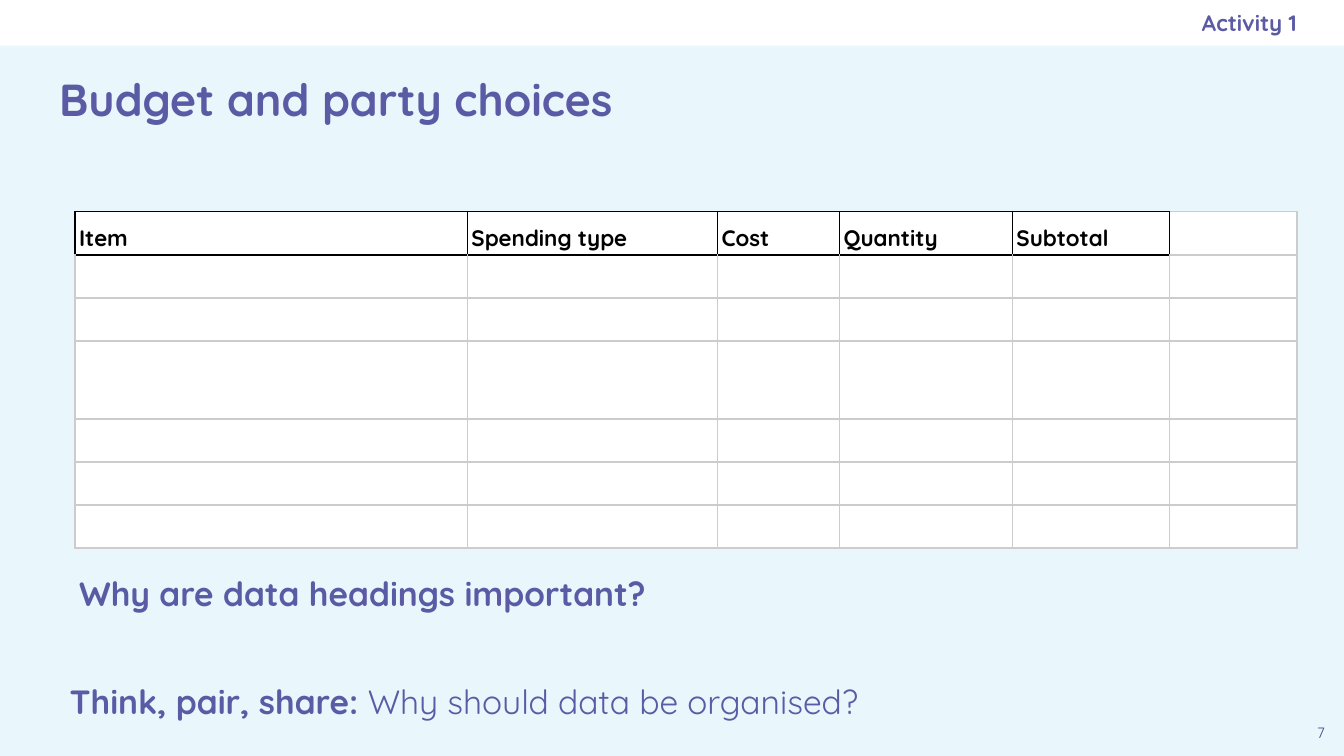
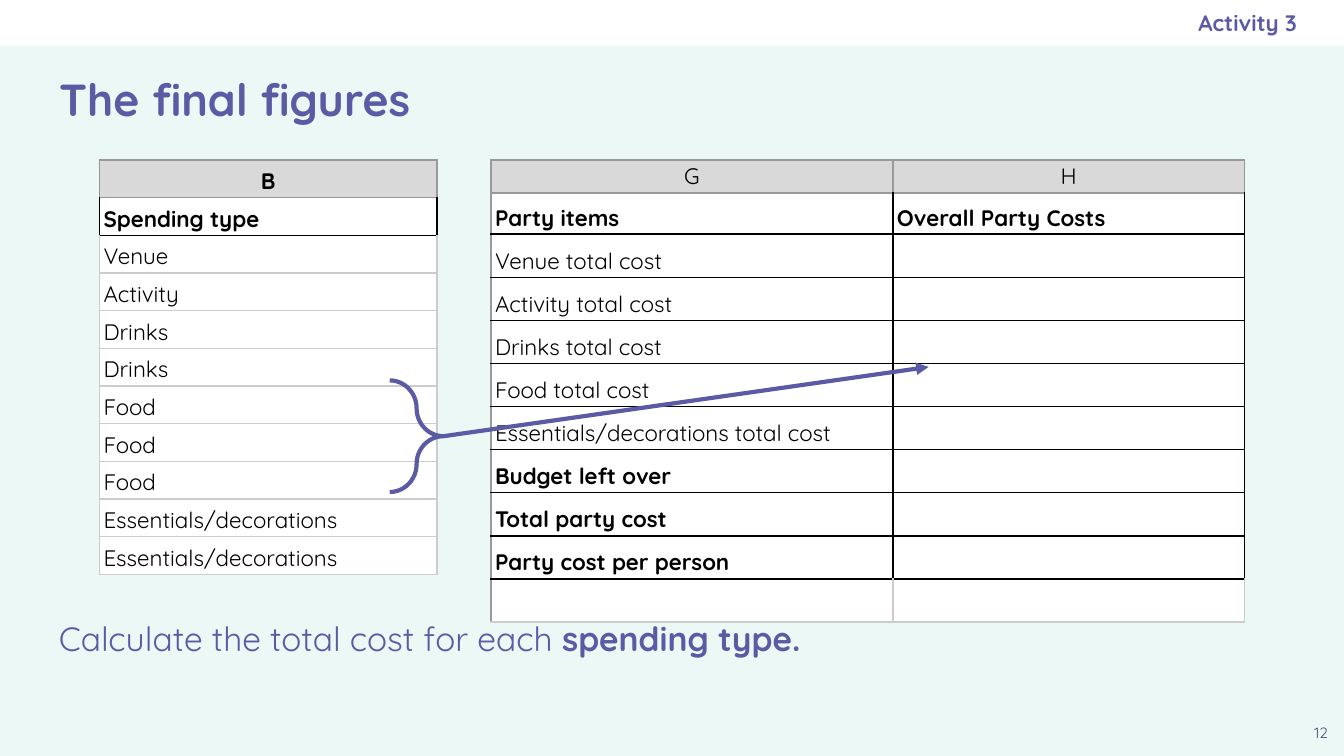
"""Build two lesson slides on planning a party budget in a spreadsheet."""
from lxml import etree
from pptx import Presentation
from pptx.dml.color import RGBColor
from pptx.enum.shapes import MSO_CONNECTOR, MSO_SHAPE
from pptx.enum.text import MSO_ANCHOR, MSO_AUTO_SIZE, PP_ALIGN
from pptx.oxml.ns import qn
from pptx.util import Pt

LEFT, CENTER, RIGHT = PP_ALIGN.LEFT, PP_ALIGN.CENTER, PP_ALIGN.RIGHT
TOP, MIDDLE, BOTTOM = MSO_ANCHOR.TOP, MSO_ANCHOR.MIDDLE, MSO_ANCHOR.BOTTOM
NO_FIT = MSO_AUTO_SIZE.NONE
RECT, BRACE = MSO_SHAPE.RECTANGLE, MSO_SHAPE.RIGHT_BRACE
STRAIGHT = MSO_CONNECTOR.STRAIGHT

FONT = "Quicksand"
PURPLE, DARK_PURPLE = "5B5BA5", "494985"
WHITE, BLACK, HEAD_GREY = "FFFFFF", "000000", "D9D9D9"
MID, PALE = "999999", "CCCCCC"
WIDTH, HEIGHT, BAND = 720, 405, 24.5

# Cell borders: left, right, top, bottom
BOXED = (BLACK,) * 4
GRID = (PALE,) * 4
LETTER = (MID,) * 4
UNDER_LETTER = (BLACK, BLACK, MID, BLACK)
UNDER_HEAD = (PALE, PALE, BLACK, PALE)
BESIDE_HEAD = (BLACK, PALE, PALE, PALE)
LABEL = (MID, BLACK, BLACK, BLACK)
LABEL_TOP = (MID, BLACK, MID, BLACK)
LABEL_END = (MID, PALE, BLACK, PALE)

BUDGET_HEADS = ["Item", "Spending type", "Cost", "Quantity", "Subtotal"]
SPENDING = ["Venue", "Activity", "Drinks", "Drinks", "Food", "Food", "Food",
            "Essentials/decorations", "Essentials/decorations"]
COSTS = ["Venue total cost", "Activity total cost", "Drinks total cost",
         "Food total cost", "Essentials/decorations total cost"]
TOTALS = ["Budget left over", "Total party cost", "Party cost per person"]

# Cells: text, bold, borders
BUDGET = {
    "at": (40.2, 113.4),
    "cols": [210.2, 134, 65.4, 92.6, 84.2, 68.4],
    "rows": [23.1] * 3 + [41.8] + [23.1] * 3,
    "cells": [[(h, True, BOXED) for h in BUDGET_HEADS] + [("", False, BESIDE_HEAD)],
              [("", False, UNDER_HEAD)] * 5 + [("", False, GRID)]]
             + [[("", False, GRID)] * 6] * 5,
}
PARTY_COSTS = {
    "at": (263, 85.7),
    "cols": [215.3, 188.4],
    "rows": [17.8, 22] + [23.1] * 9,
    "cells": [[("G", False, LETTER), ("H", False, LETTER)],
              [("Party items", True, LABEL_TOP),
               ("Overall Party Costs", True, UNDER_LETTER)]]
             + [[(c, False, LABEL), ("", False, BOXED)] for c in COSTS]
             + [[(t, True, LABEL), ("", False, BOXED)] for t in TOTALS]
             + [[("", False, LABEL_END), ("", False, UNDER_HEAD)]],
}
SPENDING_TYPES = {
    "at": (53.3, 85.7),
    "cols": [180.9],
    "rows": [20.2] * 11,
    "cells": [[("B", True, LETTER)], [("Spending type", True, UNDER_LETTER)],
              [(SPENDING[0], False, UNDER_HEAD)]]
             + [[(s, False, GRID)] for s in SPENDING[1:]],
}

SLIDES = [
    {"bg": "E9F7FC", "title": "Budget and party choices", "tag": "Activity 1",
     "number": "7", "tables": [BUDGET],
     "prompts": [((30.2, 354.2, 671, 54.7), 1.15,
                  [("Think, pair, share: ", True),
                   ("Why should data be organised?", False)]),
                 ((35.3, 296.6, 671, 24.5), 1.15,
                  [("Why are data headings important?", True)])]},
    {"bg": "ECF8F5", "title": "The final figures", "tag": "Activity 3",
     "number": "12", "tables": [PARTY_COSTS, SPENDING_TYPES],
     "prompts": [((24.5, 324, 671, 40.3), 1,
                  [("Calculate the total cost for each ", False),
                   ("spending type.", True)])],
     "brace": (208.8, 203.8, 28.8, 59.8), "arrow_to": (497.5, 196.6)},
]


def rgb(color):
    """Turn a hex string into a colour."""
    return RGBColor.from_string(color)


def fill(target, color):
    """Give a shape, cell or background a solid fill."""
    target.fill.solid()
    target.fill.fore_color.rgb = rgb(color)


def stroke(sp):
    """Draw a shape outline or connector in the accent colour."""
    sp.line.color.rgb = rgb(PURPLE)
    sp.line.width = Pt(2.25)


def add_runs(p, runs, size, color, align=LEFT, spacing=1, after=0):
    """Write (text, bold) runs into a paragraph."""
    p.alignment, p.line_spacing = align, spacing
    p.space_before, p.space_after = Pt(0), Pt(after)
    for text, bold in runs:
        r = p.add_run()
        r.text = text
        r.font.name, r.font.size, r.font.bold = FONT, Pt(size), bold
        r.font.color.rgb = rgb(color)


def set_text(sp, runs, size, color=PURPLE, anchor=TOP, right=7.2, **layout):
    """Format the text frame of a shape and fill its first paragraph."""
    tf = sp.text_frame
    tf.word_wrap, tf.auto_size, tf.vertical_anchor = True, NO_FIT, anchor
    tf.margin_left = tf.margin_top = tf.margin_bottom = Pt(7.2)
    tf.margin_right = Pt(right)
    add_runs(tf.paragraphs[0], runs, size, color, **layout)


def add_text(s, box, runs, size, **layout):
    """Add a text box."""
    set_text(s.shapes.add_textbox(*map(Pt, box)), runs, size, **layout)


def set_borders(cell, colors):
    """Draw the four 1 pt borders of a cell."""
    props = cell._tc.get_or_add_tcPr()
    for side, color in zip("LRTB", colors):
        ln = etree.SubElement(props, qn(f"a:ln{side}"), w=str(Pt(1)))
        solid = etree.SubElement(ln, qn("a:solidFill"))
        etree.SubElement(solid, qn("a:srgbClr"), val=color)


def add_table(s, spec_table):
    """Add a table with its own borders and fills."""
    cols, rows = spec_table["cols"], spec_table["rows"]
    left, top = spec_table["at"]
    table = s.shapes.add_table(len(rows), len(cols), Pt(left), Pt(top),
                               Pt(sum(cols)), Pt(sum(rows))).table
    table.first_row = table.horz_banding = False
    for col, width in zip(table.columns, cols):
        col.width = Pt(width)
    for i, (height, cells) in enumerate(zip(rows, spec_table["cells"])):
        table.rows[i].height = Pt(height)
        for j, (text, bold, borders) in enumerate(cells):
            cell = table.cell(i, j)
            letter = borders == LETTER
            set_borders(cell, borders)
            fill(cell, HEAD_GREY if letter else WHITE)
            cell.margin_left = cell.margin_right = Pt(2.2)
            cell.margin_top = cell.margin_bottom = Pt(1.4)
            cell.vertical_anchor = MIDDLE if letter else BOTTOM
            p = cell.text_frame.paragraphs[0]
            if text:
                add_runs(p, [(text, bold)], 12, BLACK, CENTER if letter else LEFT,
                         1 if letter and not bold else 1.15)
            else:
                etree.SubElement(p._p, qn("a:endParaRPr"), sz="1200")


def add_brace_arrow(s, box, end):
    """Bracket a group of rows and point from it to a cell."""
    sp = s.shapes.add_shape(BRACE, *map(Pt, box))
    sp.shadow.inherit = False
    sp.fill.background()
    sp.adjustments[0], sp.adjustments[1] = 0.54, 0.5
    stroke(sp)
    left, top, width, height = box
    line = s.shapes.add_connector(STRAIGHT, Pt(left + width), Pt(top + height / 2),
                                  *map(Pt, end))
    stroke(line)
    etree.SubElement(line.line._get_or_add_ln(), qn("a:tailEnd"), type="triangle")
    etree.SubElement(line._element.spPr, qn("a:effectLst"))


def add_slide(prs, content):
    """Add a slide with the shared band, title, tag and number."""
    s = prs.slides.add_slide(prs.slide_layouts[5])
    fill(s.background, content["bg"])
    band = s.shapes.add_shape(RECT, 0, 0, Pt(WIDTH), Pt(BAND))
    band.shadow.inherit = False
    fill(band, WHITE)
    band.line.fill.background()
    title = s.shapes.title
    title.left, title.top, title.width, title.height = map(Pt, (24.5, 25.2, 671, 54.7))
    set_text(title, [(content["title"], True)], 24, anchor=MIDDLE)
    add_text(s, (414, 0, 280.8, BAND), [(content["tag"], True)], 12,
             anchor=MIDDLE, right=0, align=RIGHT)
    add_text(s, (WIDTH - BAND, HEIGHT - BAND, BAND, BAND),
             [(content["number"], False)], 8, color=DARK_PURPLE, align=CENTER)
    for box, spacing, runs in content["prompts"]:
        add_text(s, box, runs, 18, spacing=spacing, after=16)
    for table in content["tables"]:
        add_table(s, table)
    if "brace" in content:
        add_brace_arrow(s, content["brace"], content["arrow_to"])


def main():
    """Build and save the presentation."""
    prs = Presentation()
    prs.slide_width, prs.slide_height = Pt(WIDTH), Pt(HEIGHT)
    for content in SLIDES:
        add_slide(prs, content)
    prs.save("out.pptx")


if __name__ == "__main__":
    main()
